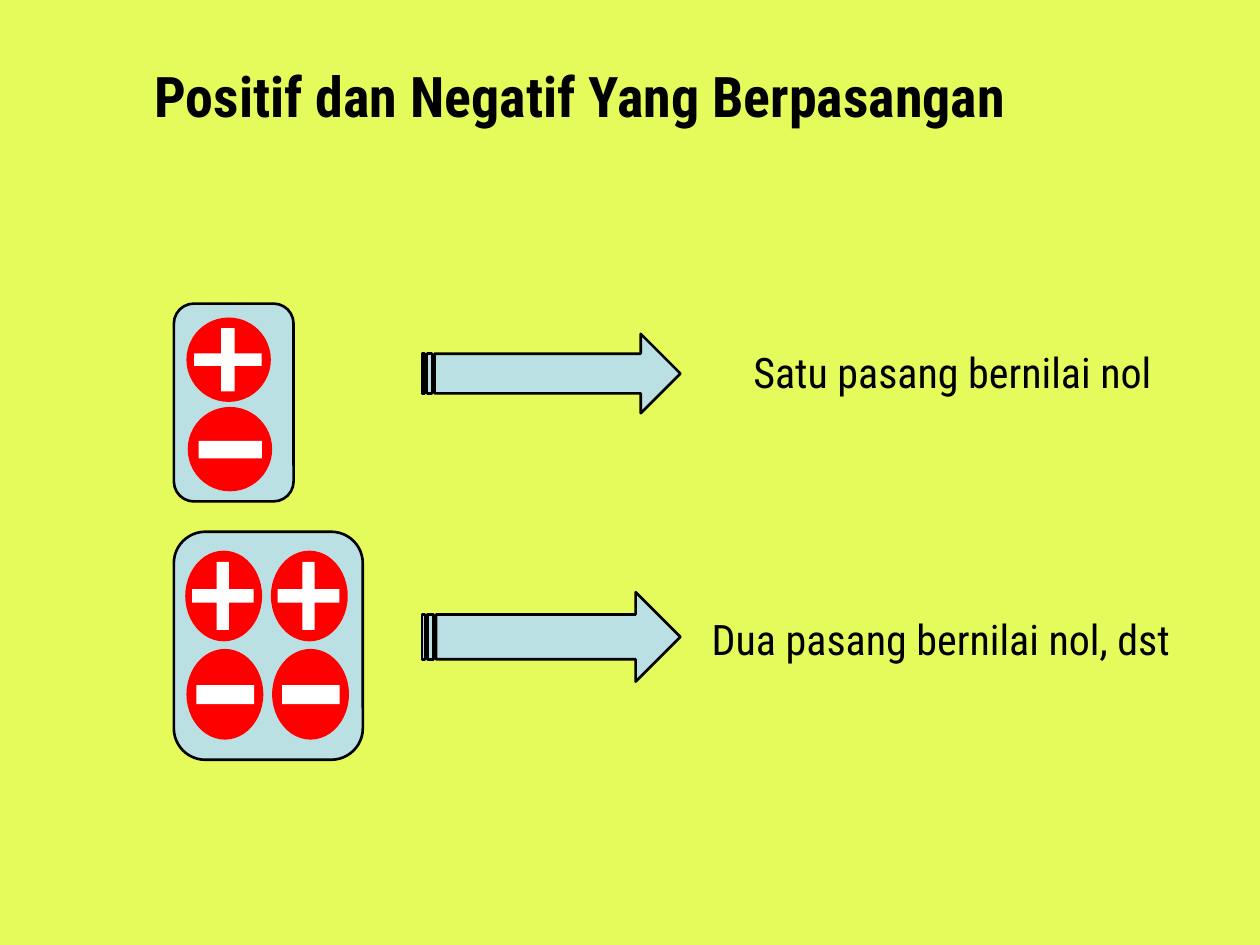
from dataclasses import dataclass

from pptx import Presentation
from pptx.dml.color import RGBColor
from pptx.enum.shapes import MSO_SHAPE
from pptx.enum.text import PP_ALIGN
from pptx.util import Inches, Pt

PANEL, DISC, BAR = MSO_SHAPE.ROUNDED_RECTANGLE, MSO_SHAPE.OVAL, MSO_SHAPE.RECTANGLE
ARROW = MSO_SHAPE.STRIPED_RIGHT_ARROW
CENTER, LEFT = PP_ALIGN.CENTER, PP_ALIGN.LEFT

# Square grid: 100 columns by 75 rows of 0.1 inch
COLUMNS, ROWS = 100, 75
CELL = Inches(0.1)

# Signs as shares of their disc: left, top, width, height
PLUS_AREA = (0.09, 0.125, 0.8, 0.75)
MINUS_AREA = (0.13, 0.4, 0.75, 0.21)
# Corners of a plus as shares of its area
PLUS_CORNERS = [(0.4, 0), (0.4, 0.4), (0, 0.4), (0, 0.6), (0.4, 0.6), (0.4, 1),
                (0.6, 1), (0.6, 0.6), (1, 0.6), (1, 0.4), (0.6, 0.4), (0.6, 0)]
MINUS_SHIFT = 0.1


@dataclass(frozen=True)
class Theme:
    background: str = "E4FB5B"
    panel: str = "BBE0E3"
    disc: str = "FF0000"
    sign: str = "FFFFFF"
    ink: str = "000000"
    font: str = "Roboto Condensed"
    title_size: int = 32
    label_size: int = 24
    outline: float = 1.5


THEME = Theme()


def cells(*counts):
    return [round(count * CELL) for count in counts]


def share_of(area, shares):
    """Return the part of an area that the shares describe."""
    left, top, width, height = area
    return (left + shares[0] * width, top + shares[1] * height,
            shares[2] * width, shares[3] * height)


def paint(shape, color, outlined=False):
    shape.shadow.inherit = False
    shape.fill.solid()
    shape.fill.fore_color.rgb = RGBColor.from_string(color)
    if outlined:
        shape.line.color.rgb = RGBColor.from_string(THEME.ink)
        shape.line.width = Pt(THEME.outline)
    else:
        shape.line.fill.background()


def add_preset(shapes, kind, area, color, outlined=False):
    shape = shapes.add_shape(kind, *cells(*area))
    paint(shape, color, outlined)


def add_plus(shapes, area):
    left, top, width, height = area
    start, *corners = [cells(left + x * width, top + y * height)
                       for x, y in PLUS_CORNERS]
    builder = shapes.build_freeform(*start)
    builder.add_line_segments(corners, close=True)
    paint(builder.convert_to_shape(), THEME.sign)


def add_pairs(page, panel, first_disc, pitch, count):
    """Draw a panel holding columns of a plus disc above a minus disc."""
    shapes = page.shapes.add_group_shape().shapes
    add_preset(shapes, PANEL, panel, THEME.panel, outlined=True)
    left, top, width, height = first_disc
    for column in range(count):
        x = left + column * pitch[0]
        positive = (x, top, width, height)
        negative = (x + MINUS_SHIFT, top + pitch[1], width, height)
        add_preset(shapes, DISC, positive, THEME.disc)
        add_plus(shapes, share_of(positive, PLUS_AREA))
        add_preset(shapes, DISC, negative, THEME.disc)
        add_preset(shapes, BAR, share_of(negative, MINUS_AREA), THEME.sign)


def add_text(page, text, area, size, bold=False, alignment=CENTER):
    frame = page.shapes.add_textbox(*cells(*area)).text_frame
    frame.word_wrap = True
    para = frame.paragraphs[0]
    para.alignment = alignment
    span = para.add_run()
    span.text = text
    span.font.color.rgb = RGBColor.from_string(THEME.ink)
    for name, value in {"name": THEME.font, "size": Pt(size), "bold": bold}.items():
        setattr(span.font, name, value)


def main():
    deck = Presentation()
    deck.slide_width, deck.slide_height = cells(COLUMNS, ROWS)
    page = deck.slides.add_slide(deck.slide_layouts[6])
    page.background.fill.solid()
    page.background.fill.fore_color.rgb = RGBColor.from_string(THEME.background)

    add_text(page, "Positif dan Negatif Yang Berpasangan",
             (3.5, 4.4, 85.1, 6.3), THEME.title_size, bold=True)
    add_pairs(page, panel=(13.8, 24.1, 9.5, 15.7),
              first_disc=(14.8, 25.2, 6.7, 6.7), pitch=(0, 7.1), count=1)
    add_pairs(page, panel=(13.8, 42.2, 15, 18.1),
              first_disc=(14.7, 43.7, 6.1, 7.2), pitch=(6.8, 7.8), count=2)
    for top, height in ((26.5, 6.3), (47, 7.1)):
        add_preset(page.shapes, ARROW, (33.5, top, 20.5, height),
                   THEME.panel, outlined=True)
    add_text(page, "Satu pasang bernilai nol", (56.3, 27, 38.6, 5), THEME.label_size)
    add_text(page, "Dua pasang bernilai nol, dst", (55.5, 48.2, 40.2, 9),
             THEME.label_size, alignment=LEFT)
    deck.save("out.pptx")


if __name__ == "__main__":
    main()
